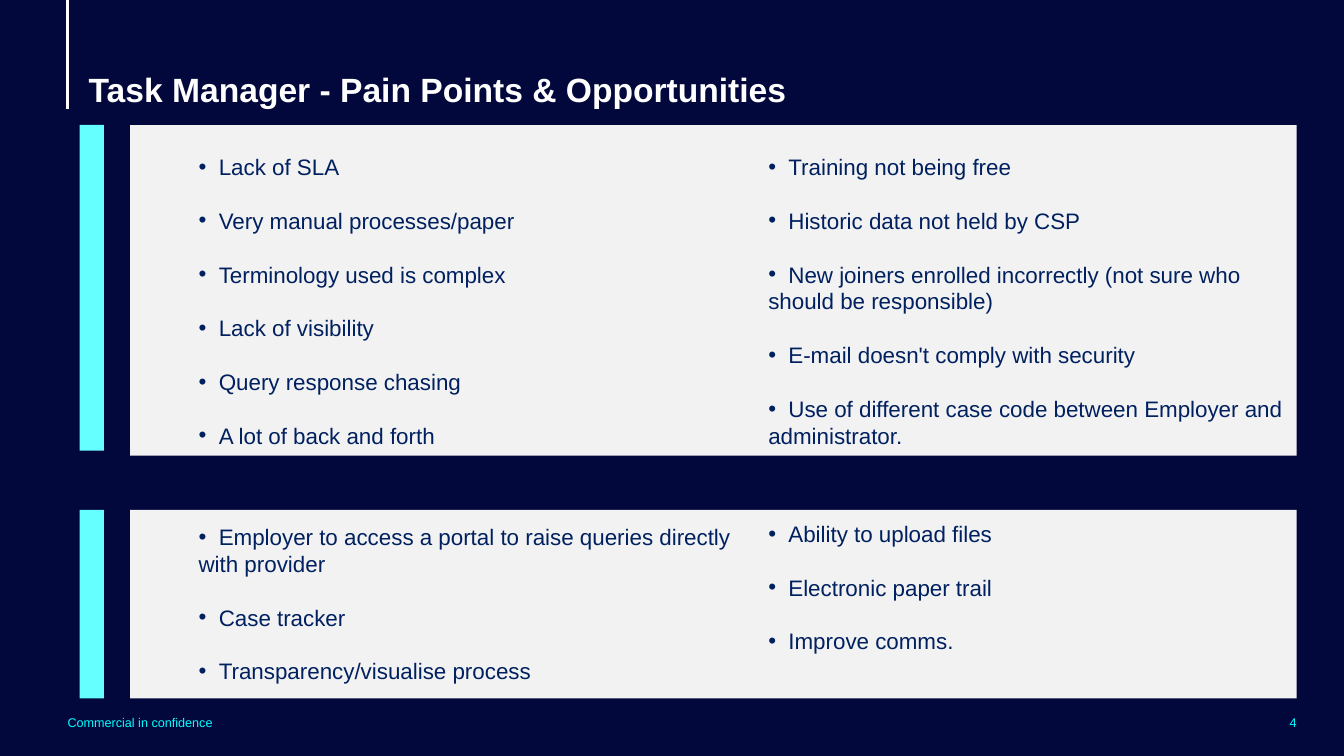
from lxml.etree import SubElement
from pptx import Presentation
from pptx.dml.color import RGBColor
from pptx.enum.shapes import MSO_CONNECTOR as Connector, MSO_SHAPE as Shape
from pptx.enum.text import MSO_ANCHOR as Anchor, MSO_AUTO_SIZE as AutoSize, PP_ALIGN as Align
from pptx.oxml.ns import qn
from pptx.util import Inches, Pt


def colour(value):
    return RGBColor.from_string(value)


class PageBuilder:
    """Holds the style and the current slide, and draws each kind of element."""

    font = "Arial"
    night, white, panel_grey = "02083C", "FFFFFF", "F2F2F2"
    navy, aqua, cyan = "002060", "66FFFF", "00FFFF"
    bullet_pitch = 19.2

    def __init__(self, deck):
        self.page = deck.slides.add_slide(deck.slide_layouts[5])
        fill = self.page.background.fill
        fill.solid()
        fill.fore_color.rgb = colour(self.night)

    def place(self, shape, left, top, width, height):
        shape.left, shape.top = Inches(left), Inches(top)
        shape.width, shape.height = Inches(width), Inches(height)

    def set_text(self, box, lines, size, ink, anchor=Anchor.TOP, align=Align.LEFT, bold=False):
        frame = box.text_frame
        frame.text = "\n".join(lines)
        frame.word_wrap = True
        frame.auto_size = AutoSize.NONE
        frame.vertical_anchor = anchor
        frame.margin_left = frame.margin_right = 0
        frame.margin_top = frame.margin_bottom = 0
        for para in frame.paragraphs:
            para.alignment = align
            for span in para.runs:
                span.font.name = self.font
                span.font.size = Pt(size)
                span.font.bold = bold
                span.font.color.rgb = colour(ink)
        return frame.paragraphs

    def title(self, text, *area):
        box = self.page.shapes.title
        self.place(box, *area)
        paras = self.set_text(box, [text], 24, self.white, Anchor.BOTTOM, bold=True)
        paras[0].line_spacing = 0.9

    def label(self, text, *area, align=Align.LEFT):
        box = self.page.shapes.add_textbox(*map(Inches, area))
        self.set_text(box, [text], 9, self.cyan, Anchor.MIDDLE, align)

    def bullets(self, lines, *area):
        box = self.page.shapes.add_textbox(*map(Inches, area))
        tabbed = ["\t" + line for line in lines]
        for para in self.set_text(box, tabbed, 16, self.navy):
            para.line_spacing = Pt(self.bullet_pitch)
            para.space_after = Pt(self.bullet_pitch)
            properties = para._p.get_or_add_pPr()
            properties.set("marL", "0")
            properties.set("indent", "0")
            SubElement(properties, qn("a:buFont"), typeface=self.font)
            SubElement(properties, qn("a:buChar"), char="•")
            stops = SubElement(properties, qn("a:tabLst"))
            SubElement(stops, qn("a:tab"), pos=str(Inches(0.2)), algn="l")

    def block(self, fill, *area):
        shape = self.page.shapes.add_shape(Shape.RECTANGLE, *map(Inches, area))
        shape.shadow.inherit = False
        shape.fill.solid()
        shape.fill.fore_color.rgb = colour(fill)
        shape.line.fill.background()

    def rule(self, *ends):
        line = self.page.shapes.add_connector(Connector.STRAIGHT, *map(Inches, ends))
        line.line.color.rgb = colour(self.white)
        line.line.width = Pt(2.75)
        SubElement(line._element.spPr, qn("a:effectLst"))


PAIN_POINTS = [
    "Lack of SLA",
    "Very manual processes/paper",
    "Terminology used is complex",
    "Lack of visibility",
    "Query response chasing",
    "A lot of back and forth",
]
MORE_PAIN_POINTS = [
    "Training not being free",
    "Historic data not held by CSP",
    "New joiners enrolled incorrectly (not sure who should be responsible)",
    "E-mail doesn't comply with security",
    "Use of different case code between Employer and administrator.",
]
OPPORTUNITIES = [
    "Employer to access a portal to raise queries directly with provider",
    "Case tracker",
    "Transparency/visualise process",
]
MORE_OPPORTUNITIES = ["Ability to upload files", "Electronic paper trail", "Improve comms."]

SECTIONS = [
    (1.24, 3.28, 3.23, [(PAIN_POINTS, 1.52, 2.96), (MORE_PAIN_POINTS, 1.52, 2.96)]),
    (5.06, 1.87, 1.87, [(OPPORTUNITIES, 5.19, 1.62), (MORE_OPPORTUNITIES, 5.16, 1.35)]),
]
COLUMNS = [(1.97, 5.48), (7.62, 5.24)]


def main():
    deck = Presentation()
    deck.slide_width, deck.slide_height = Inches(13.33), Inches(7.5)
    builder = PageBuilder(deck)
    builder.rule(0.67, 0, 0.67, 1.08)
    builder.title("Task Manager - Pain Points & Opportunities", 0.88, 0.26, 11.57, 0.83)
    for top, panel_height, bar_height, lists in SECTIONS:
        builder.block(builder.panel_grey, 1.29, top, 11.57, panel_height)
        builder.block(builder.aqua, 0.79, top, 0.24, bar_height)
        for (left, width), (lines, list_top, height) in zip(COLUMNS, lists):
            builder.bullets(lines, left, list_top, width, height)
    builder.label("Commercial in confidence", 0.67, 7.09, 4.5, 0.16)
    builder.label("4", 12.47, 7.09, 0.39, 0.16, align=Align.RIGHT)
    deck.save("out.pptx")


if __name__ == "__main__":
    main()
